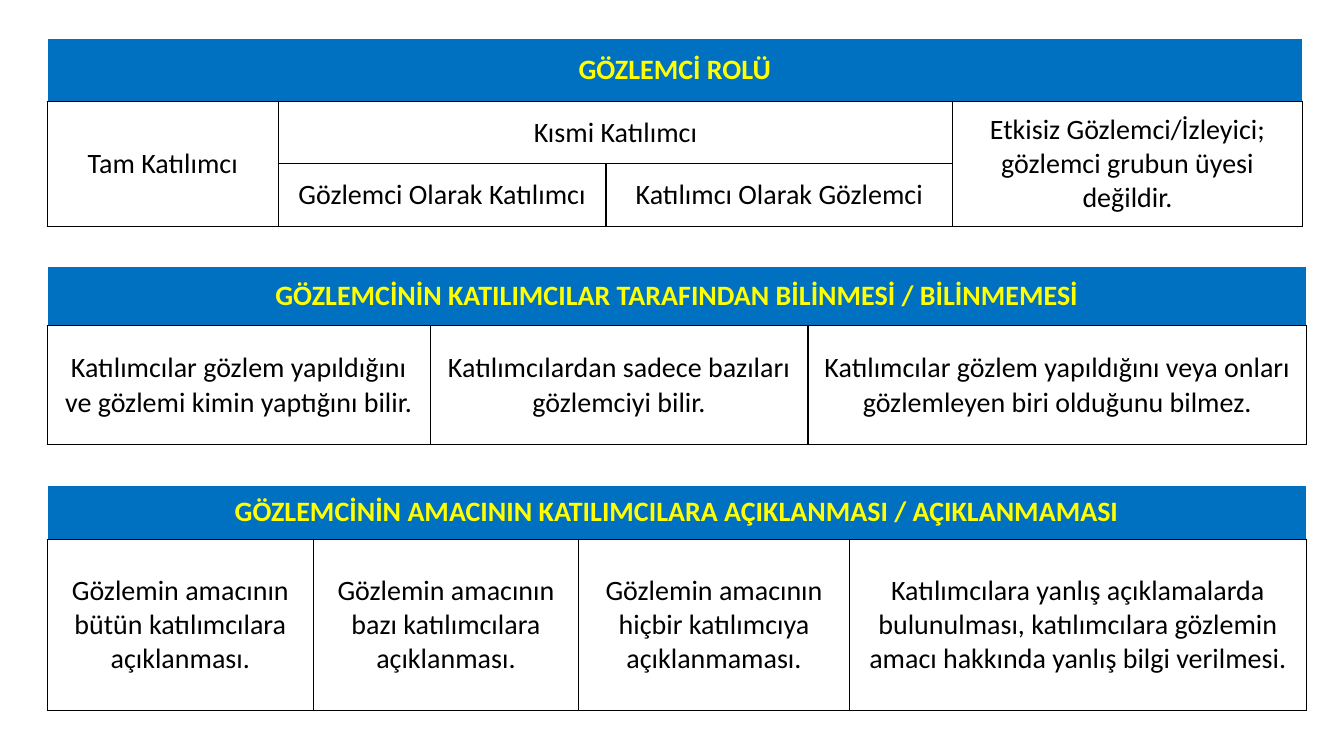
import lxml.etree
import pptx
import pptx.dml.color
import pptx.enum.text
import pptx.oxml.ns
import pptx.util

Cm = pptx.util.Cm
BLUE, YELLOW, BLACK, WHITE = "0070C0", "FFFF00", "000000", "FFFFFF"
FONT = {"name": "Calibri", "size": pptx.util.Pt(20)}
LEFT = 1.19


def tint(target, code):
    """Give a fill or a font colour the hex value."""
    target.rgb = pptx.dml.color.RGBColor.from_string(code)


def edge(cell, side, code):
    """Draw one side (L, R, T or B) of a cell as a 1 pt line."""
    qn = pptx.oxml.ns.qn
    props = cell._tc.get_or_add_tcPr()
    line = lxml.etree.SubElement(props, qn("a:ln" + side), w="12700")
    fill = lxml.etree.SubElement(line, qn("a:solidFill"))
    lxml.etree.SubElement(fill, qn("a:srgbClr"), val=code)


# Each text: row, column, rows spanned, columns spanned, wording
tables = [
    {
        "top": 0.97,
        "cols": [5.82, 8.26, 8.74, 8.81],
        "rows": [1.58, 1.58, 1.58],
        "texts": [
            (0, 0, 1, 4, "GÖZLEMCİ ROLÜ"),
            (1, 0, 2, 1, "Tam Katılımcı"),
            (1, 1, 1, 2, "Kısmi Katılımcı"),
            (1, 3, 2, 1, "Etkisiz Gözlemci/İzleyici; gözlemci grubun üyesi değildir."),
            (2, 1, 1, 1, "Gözlemci Olarak Katılımcı"),
            (2, 2, 1, 1, "Katılımcı Olarak Gözlemci"),
        ],
    },
    {
        "top": 6.71,
        "cols": [9.65, 9.52, 12.57],
        "rows": [1.5, 3],
        "texts": [
            (0, 0, 1, 3, "GÖZLEMCİNİN KATILIMCILAR TARAFINDAN BİLİNMESİ / BİLİNMEMESİ"),
            (1, 0, 1, 1, "Katılımcılar gözlem yapıldığını ve gözlemi kimin yaptığını bilir."),
            (1, 1, 1, 1, "Katılımcılardan sadece bazıları gözlemciyi bilir."),
            (1, 2, 1, 1, "Katılımcılar gözlem yapıldığını veya onları gözlemleyen biri olduğunu bilmez."),
        ],
    },
    {
        "top": 12.22,
        "cols": [6.71, 6.68, 6.83, 11.51],
        "rows": [1.37, 4.32],
        "texts": [
            (0, 0, 1, 4, "GÖZLEMCİNİN AMACININ KATILIMCILARA AÇIKLANMASI / AÇIKLANMAMASI"),
            (1, 0, 1, 1, "Gözlemin amacının bütün katılımcılara açıklanması."),
            (1, 1, 1, 1, "Gözlemin amacının bazı katılımcılara açıklanması."),
            (1, 2, 1, 1, "Gözlemin amacının hiçbir katılımcıya açıklanmaması."),
            (1, 3, 1, 1, "Katılımcılara yanlış açıklamalarda bulunulması, katılımcılara gözlemin "
                         "amacı hakkında yanlış bilgi verilmesi."),
        ],
    },
]

deck = pptx.Presentation()
deck.slide_width, deck.slide_height = Cm(33.87), Cm(19.05)
slide = deck.slides.add_slide(deck.slide_layouts[6])

for data in tables:
    cols, rows = data["cols"], data["rows"]
    frame = slide.shapes.add_table(
        len(rows), len(cols), Cm(LEFT), Cm(data["top"]), Cm(sum(cols)), Cm(sum(rows)))
    table = frame.table
    table.horz_banding = False
    for col, width in zip(table.columns, cols):
        col.width = Cm(width)
    for row, height in zip(table.rows, rows):
        row.height = Cm(height)

    for r in range(len(rows)):
        for c in range(len(cols)):
            cell = table.cell(r, c)
            for side in "LRTB":
                edge(cell, side, WHITE if r == 0 and side != "B" else BLACK)
            if r == 0:
                cell.fill.solid()
                tint(cell.fill.fore_color, BLUE)
            else:
                cell.fill.background()

    for r, c, down, across, text in data["texts"]:
        cell = table.cell(r, c)
        if down * across > 1:
            cell.merge(table.cell(r + down - 1, c + across - 1))
        cell.vertical_anchor = pptx.enum.text.MSO_ANCHOR.MIDDLE
        para = cell.text_frame.paragraphs[0]
        para.alignment = pptx.enum.text.PP_ALIGN.CENTER
        run = para.add_run()
        run.text = text
        for name, value in {**FONT, "bold": r == 0}.items():
            setattr(run.font, name, value)
        tint(run.font.color, YELLOW if r == 0 else BLACK)

deck.save("out.pptx")
